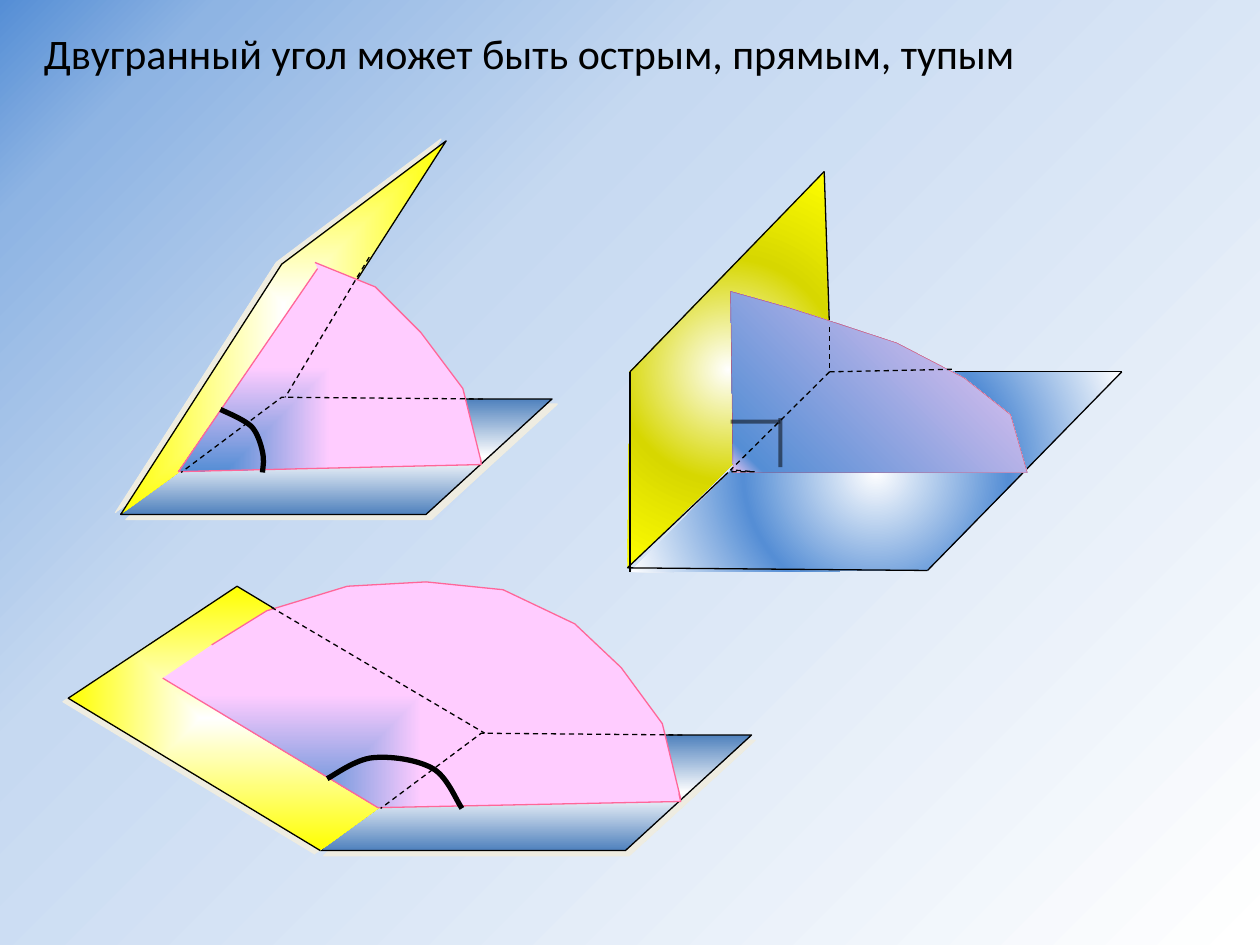
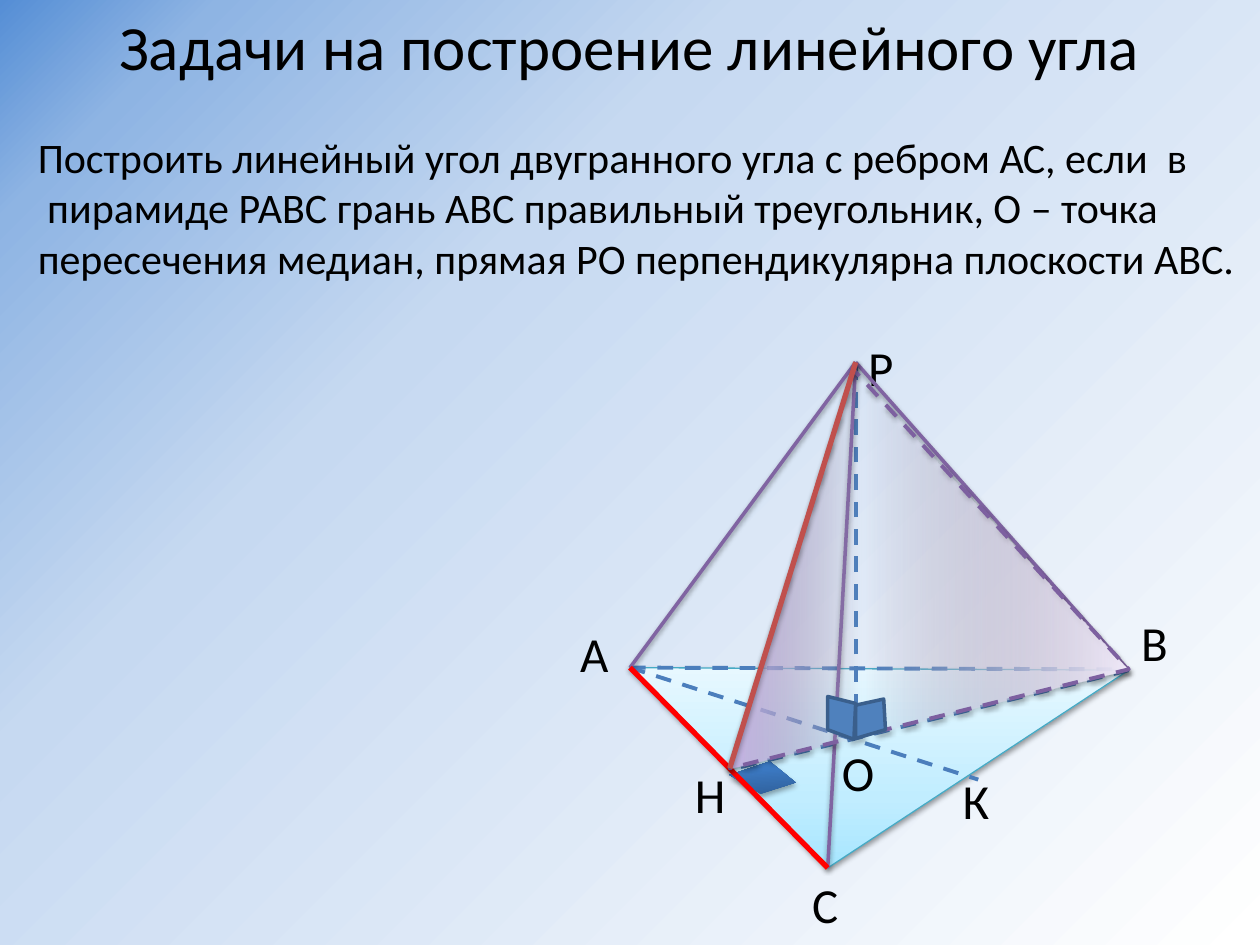
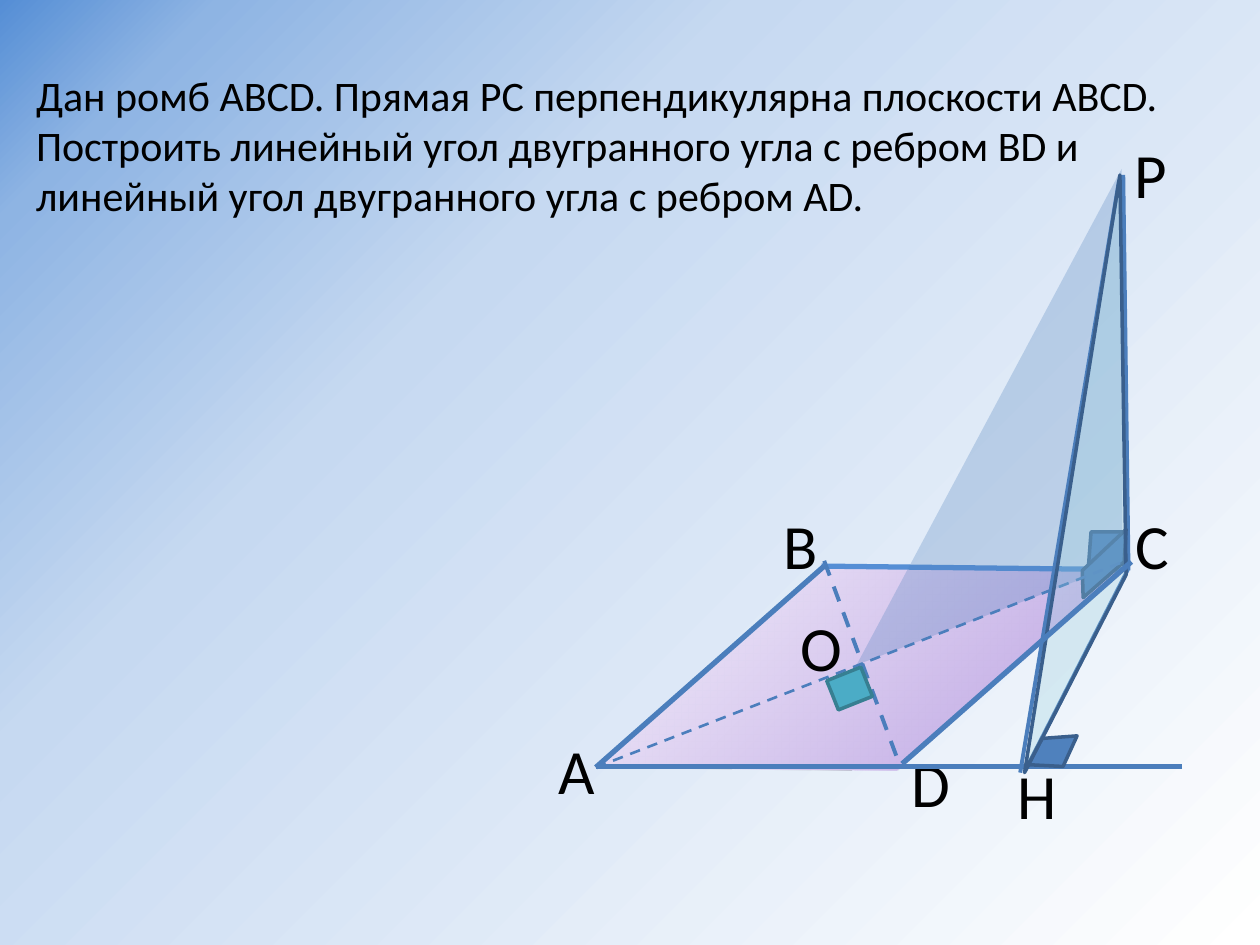
from itertools import pairwise

from lxml.etree import SubElement
from pptx import Presentation
from pptx.dml.color import RGBColor
from pptx.enum.dml import MSO_LINE
from pptx.enum.shapes import MSO_CONNECTOR, MSO_SHAPE
from pptx.enum.text import MSO_AUTO_SIZE
from pptx.oxml import parse_xml
from pptx.oxml.ns import nsdecls, qn
from pptx.util import Pt

FONT = "Calibri"
BLACK, RED, BLUE, EDGE = "000000", "FF0000", "4F81BD", "4B7EBC"
SKY, OUTLINE, PURPLE, BRICK = "558ED5", "3A5F8C", "8064A2", "C0504D"
CENTER, LOWER_LEFT = (50, 50, 50, 50), (0, 100, 100, 0)
EDGE_SHADOW = ("000000", 38, 3.1, 1.6, 90)
FACE_SHADOW = ("000000", 35, 3.1, 1.8, 90)


def rgb(color):
    return RGBColor.from_string(color)


def gradient(stops, kind, to=None):
    marks = ""
    for pos, color, *alpha in stops:
        inner = f'<a:alpha val="{alpha[0] * 1000}"/>' if alpha else ""
        marks += f'<a:gs pos="{pos * 1000}"><a:srgbClr val="{rgb(color)}">{inner}</a:srgbClr></a:gs>'
    if to is None:
        course = f'<a:lin ang="{kind * 60000}" scaled="0"/>'
    else:
        l, t, r, b = (side * 1000 for side in to)
        course = f'<a:path path="{kind}"><a:fillToRect l="{l}" t="{t}" r="{r}" b="{b}"/></a:path>'
    return f'<a:gradFill {nsdecls("a")} rotWithShape="1"><a:gsLst>{marks}</a:gsLst>{course}</a:gradFill>'


BACKGROUND = gradient([(0, SKY), (10, "8EB4E3"), (34, "C6D9F1"), (100, "FFFFFF")],
                      "circle", (0, 0, 100, 100))
FLOOR = gradient([(0, "FFFFFF"), (100, BLUE)], "rect", CENTER)
WALL = gradient([(0, "FFFFFF"), (100, "FFFF00")], "rect", CENTER)
SECTION = gradient([(0, SKY), (100, "FFCCFF")], "rect", LOWER_LEFT)
RIGHT_WALL = gradient([(0, "FFFFFF"), (50, "D7D700"), (100, "FFFF00")], "circle", CENTER)
RIGHT_FLOOR = gradient([(0, "FFFFFF"), (50, SKY), (100, "FFFFFF")], "circle", CENTER)
RIGHT_SECTION = gradient([(0, "F6CAF4"), (7, SKY), (100, "F6CAF4")], "circle", LOWER_LEFT)
BASE = gradient([(0, "A7E6FF"), (35, "C1EDFF"), (100, "E7F8FF")], 270)
ANGLE_MARK = gradient([(0, "2F5F99"), (80, "3D7CC7"), (100, "3A7CCB")], 270)
FACE = gradient([(0, "C9B5E8", 95), (33, "D8CBEE", 0), (100, "F0EAF9")], 0)
RHOMBUS = gradient([(27, "C9B5E8"), (92, "F0EAF9"), (100, "D8CBEE", 0)],
                   "circle", (100, 100, 0, 0))


class Deck:
    """Holds the presentation style and draws on the current slide."""

    def __init__(self):
        self.prs = Presentation()
        self.prs.slide_width, self.prs.slide_height = Pt(720), Pt(540)

    def slide(self):
        self.s = self.prs.slides.add_slide(self.prs.slide_layouts[6])
        self.s.background.fill.solid()
        bg = self.s.element.find(".//" + qn("p:bgPr"))
        bg.replace(bg[0], parse_xml(BACKGROUND))

    def stroke(self, sp, color, width, dash, alpha, shadow):
        if color is None:
            sp.line.fill.background()
        else:
            sp.line.color.rgb = rgb(color)
            sp.line.width = Pt(width)
            if dash:
                sp.line.dash_style = MSO_LINE.DASH
            if alpha:
                self.fade(sp.element.spPr.find(qn("a:ln")), alpha)
        effects = SubElement(sp.element.spPr, qn("a:effectLst"))
        if shadow:
            tint, opacity, blur, dist, angle = shadow
            outer = SubElement(effects, qn("a:outerShdw"), blurRad=str(Pt(blur)), dist=str(Pt(dist)),
                               dir=str(angle * 60000), rotWithShape="0")
            SubElement(outer, qn("a:srgbClr"), val=str(rgb(tint)))
            self.fade(outer, opacity)

    def fade(self, owner, alpha):
        color = owner.find(".//" + qn("a:srgbClr"))
        SubElement(color, qn("a:alpha"), val=str(alpha * 1000))

    def paint(self, sp, fill, alpha=None):
        if fill is None:
            sp.fill.background()
            return
        sp.fill.solid()
        solid = sp.element.spPr.find(qn("a:solidFill"))
        if fill.startswith("<"):
            sp.element.spPr.replace(solid, parse_xml(fill))
            return
        sp.fill.fore_color.rgb = rgb(fill)
        if alpha:
            self.fade(sp.element.spPr, alpha)

    def outline(self, points, fill=None, color=None, width=0.75, dash=False, close=True,
                fill_alpha=None, line_alpha=None, shadow=None, rotation=0):
        (x, y), *rest = [(Pt(px), Pt(py)) for px, py in points]
        fb = self.s.shapes.build_freeform(x, y)
        fb.add_line_segments(rest, close=close)
        sp = fb.convert_to_shape()
        sp.rotation = rotation
        self.paint(sp, fill, fill_alpha)
        self.stroke(sp, color, width, dash, line_alpha, shadow)
        return sp

    def arc(self, points):
        sp = self.outline(points, color=BLACK, width=3, close=False)
        steps = list(sp.element.iter(qn("a:lnTo")))
        for first, *others in zip(steps[::3], steps[1::3], steps[2::3]):
            first.tag = qn("a:cubicBezTo")
            for step in others:
                first.append(step[0])
                step.getparent().remove(step)

    def lines(self, *points, color=BLACK, width=0.75, dash=False, alpha=None, shadow=None):
        for start, end in pairwise(points):
            sp = self.s.shapes.add_connector(MSO_CONNECTOR.STRAIGHT, *map(Pt, start + end))
            self.stroke(sp, color, width, dash, alpha, shadow)

    def rect(self, x, y, w, h, fill, color, rotation):
        sp = self.s.shapes.add_shape(MSO_SHAPE.RECTANGLE, Pt(x), Pt(y), Pt(w), Pt(h))
        sp.rotation = rotation
        self.paint(sp, fill)
        self.stroke(sp, color, 2, False, None, None)

    def text(self, x, y, w, h, size, *paragraphs, wrap=False):
        tf = self.s.shapes.add_textbox(Pt(x), Pt(y), Pt(w), Pt(h)).text_frame
        tf.word_wrap = wrap
        tf.auto_size = MSO_AUTO_SIZE.SHAPE_TO_FIT_TEXT
        for i, line in enumerate(paragraphs):
            p = tf.add_paragraph() if i else tf.paragraphs[0]
            p.text = line
            p.font.name, p.font.size = FONT, Pt(size)
            p.font.color.rgb = rgb(BLACK)

    def labels(self, size, height, places):
        for letter, x, y, w in places:
            self.text(x, y, w, height, size, letter)

    def dihedral(self, dx, dy, floor_shadow, wall, wall_shadow, section, arc, hidden):
        def moved(*points):
            return [(x + dx, y + dy) for x, y in points]

        self.outline(moved((69, 294), (141, 228), (315.5, 228), (243.5, 294)),
                     FLOOR, BLACK, shadow=floor_shadow)
        self.outline(wall, WALL, BLACK, close=False, shadow=wall_shadow)
        self.outline(section, SECTION, "FF6699", close=False)
        self.arc(arc)
        self.outline(moved((276, 228), (161, 227), (103.5, 270)), color=BLACK, dash=True, close=False)
        self.outline(hidden, color=BLACK, dash=True, close=False)


def angle_kinds(d):
    d.slide()
    d.dihedral(
        0, 0, ("EEECE1", 100, 0, 4.2, 45),
        [(161, 227), (255, 80.5), (161, 151), (69, 294)], ("EEECE1", 100, 0, 3.2, 198),
        [(181.5, 153.5), (102, 269.5), (275, 265.5), (274.5, 261.5), (275, 264),
         (264.5, 222), (240.5, 190), (214.5, 164), (180, 150)],
        [(126, 234), (129, 235.5), (139, 239.5), (143.5, 243.5), (147, 247),
         (149, 253.5), (150, 258), (151, 263), (150.5, 265.5), (150, 270)],
        [(211, 147), (163, 227)])
    d.text(18, 12, 660, 37, 24, "Двугранный угол может быть острым, прямым, тупым", wrap=True)
    d.dihedral(
        114, 192, ("EEECE1", 100, 0, 3.6, 56),
        [(275, 419), (135.5, 335), (39, 399), (183, 486)], ("EEECE1", 100, 0, 3.6, 146),
        [(93, 387.5), (216, 461.5), (389, 458), (388, 453.5), (389, 456.5), (378.5, 413.5),
         (355, 381.5), (328.5, 356.5), (287.5, 337), (243.5, 332.5), (198.5, 335),
         (152.5, 349), (121, 368.5)],
        [(187, 445), (191, 443), (203, 434), (213, 433), (223, 432),
         (238, 434), (247, 439), (255.5, 443.5), (260.5, 457), (264, 462)],
        [(155, 347), (277, 419)])
    right_angle(d)


def right_angle(d):
    top, left, back, corner = (471, 98), (360, 212.5), (474, 212.5), (358.5, 324.5)
    front, far = (530, 326), (641, 212.5)
    d.outline([top, (474, 211), corner, left], RIGHT_WALL)
    d.outline([back, far, front, (360, 327)], RIGHT_FLOOR)
    d.lines((474, 187), top, left, (360, 327))
    d.lines((416, 270), corner, front, far, (546, 212.5))
    d.outline([(417.5, 166.5), (419, 270), (587, 270), (577.5, 237), (551, 216), (512.5, 196),
               (474.5, 183.5), (449.5, 175.5)], RIGHT_SECTION, RED, 0.25, line_alpha=51)
    d.lines((417.5, 241), (446, 241), width=2.25, alpha=51)
    d.lines((446, 239), (446, 267), width=2.25, alpha=51)
    d.lines(back, (546, 211), dash=True)
    d.outline([back, (417.5, 268.5), (431, 269.5), (417.5, 269.5)], color=BLACK, dash=True, close=False)
    d.lines((474, 187), back, dash=True)


def pyramid(d):
    d.slide()
    a, b, c, h, o, p = (360, 381.5), (645, 383), (473, 496), (417, 439), (489, 421), (489, 207)
    d.outline([a, b, c], BASE, "46AAC5", shadow=EDGE_SHADOW)
    d.lines(a, (645, 382.5), color=EDGE, width=2.25, dash=True)
    d.text(14.5, 71.5, 705.5, 94.5, 24,
           "Построить линейный угол двугранного угла с ребром АС, если  в",
           " пирамиде РАВС грань АВС правильный треугольник, О – точка",
           "пересечения медиан, прямая РО перпендикулярна плоскости АВС.")
    for start, end in ((a, (559, 445.5)), (b, (422.5, 438.5)), (o, p)):
        d.lines(start, end, color=EDGE, width=2.25, dash=True)
    d.labels(28, 41, [("А", 324.5, 353, 31), ("В", 645, 346.5, 31), ("С", 457, 496, 29.5),
                      ("К", 543, 436.5, 31), ("Н", 390, 433.5, 32.5), ("О", 474, 421, 33),
                      ("Р", 489, 189.5, 29.5)])
    for corner in (b, c, a):
        d.lines(p, corner, color=PURPLE, width=2, shadow=EDGE_SHADOW)
    d.outline([(417, 441.5), (440.5, 435.5), (454.5, 448.5), (434, 453.5)],
              ANGLE_MARK, shadow=FACE_SHADOW, rotation=355.9)
    d.lines(a, c, color=RED, width=3)
    d.outline([p, h, (645, 382.5), (487.5, 211)], FACE, "7D60A0", 2.25, dash=True, shadow=EDGE_SHADOW)
    d.lines(p, h, color=BRICK, width=3, shadow=FACE_SHADOW)
    d.outline([(489, 422), (489, 403), (505, 399.5), (506, 417)], BLUE, OUTLINE, 2)
    d.outline([(488, 422.5), (473, 417), (473, 398), (489, 402)], BLUE, OUTLINE, 2)
    d.text(61, 0.5, 603.5, 51, 36, "Задачи на построение линейного угла")


def rhombus(d):
    d.slide()
    d.text(13.5, 36, 666.5, 94.5, 24,
           "Дан ромб АВСD. Прямая РС перпендикулярна плоскости АВСD.",
           "Построить линейный угол двугранного угла с ребром ВD и",
           "линейный угол двугранного угла с ребром АD.")
    a, b = (340.5, 438.5), (471, 323.5)
    d.outline([a, b, (643.5, 325.5), (512.5, 440.5)], RHOMBUS)
    d.lines((469.5, 323.5), (641.5, 325.5), color=SKY, width=3)
    d.lines(b, a, color=EDGE, width=3)
    d.labels(36, 51, [("А", 312, 414.5, 27), ("В", 440.5, 286, 27), ("С", 641.5, 286, 26),
                      ("D", 514, 422, 28)])
    d.lines((641.5, 100), (644.5, 326), color=EDGE, width=3)
    d.labels(36, 51, [("P", 641.5, 74, 33)])
    d.outline([(643.5, 322.5), (622, 323.5), (623.5, 304), (641.5, 304)], BLUE, OUTLINE, 2)
    d.outline([(643.5, 302.5), (618.5, 326), (619, 341.5), (642.5, 321)], BLUE, OUTLINE, 2)
    d.lines((471, 320.5), (513.5, 435.5), color=EDGE, width=2.25, dash=True)
    d.lines(a, (642, 321), color=EDGE, width=1.5, dash=True)
    d.outline([(641, 96.5), (489.5, 380), (641.5, 322)], BLUE, fill_alpha=28)
    d.lines((675.5, 438), (340.5, 438), color=EDGE, width=3)
    d.lines((644.5, 325.5), (587, 438), color=EDGE, width=2.25)
    d.outline([(587.5, 437), (607.5, 438), (615.5, 420.5), (595.5, 422)], BLUE, OUTLINE, 2)
    d.labels(36, 51, [("H", 574.5, 429, 37.5)])
    d.lines((639.5, 103), (583, 441.5), color=EDGE, width=2.25)
    d.outline([(640, 100), (585.5, 441.5), (643.5, 328.5)], "93CDDD", OUTLINE, 2, fill_alpha=28)
    d.labels(36, 51, [("O", 450.5, 344, 39)])
    d.lines((646.5, 321), (515.5, 436.5), color=EDGE, width=3)
    d.rect(476.5, 383, 18, 21, "4BACC6", "377F92", 68.2)


def main():
    d = Deck()
    angle_kinds(d)
    pyramid(d)
    rhombus(d)
    d.prs.save("out.pptx")


if __name__ == "__main__":
    main()
